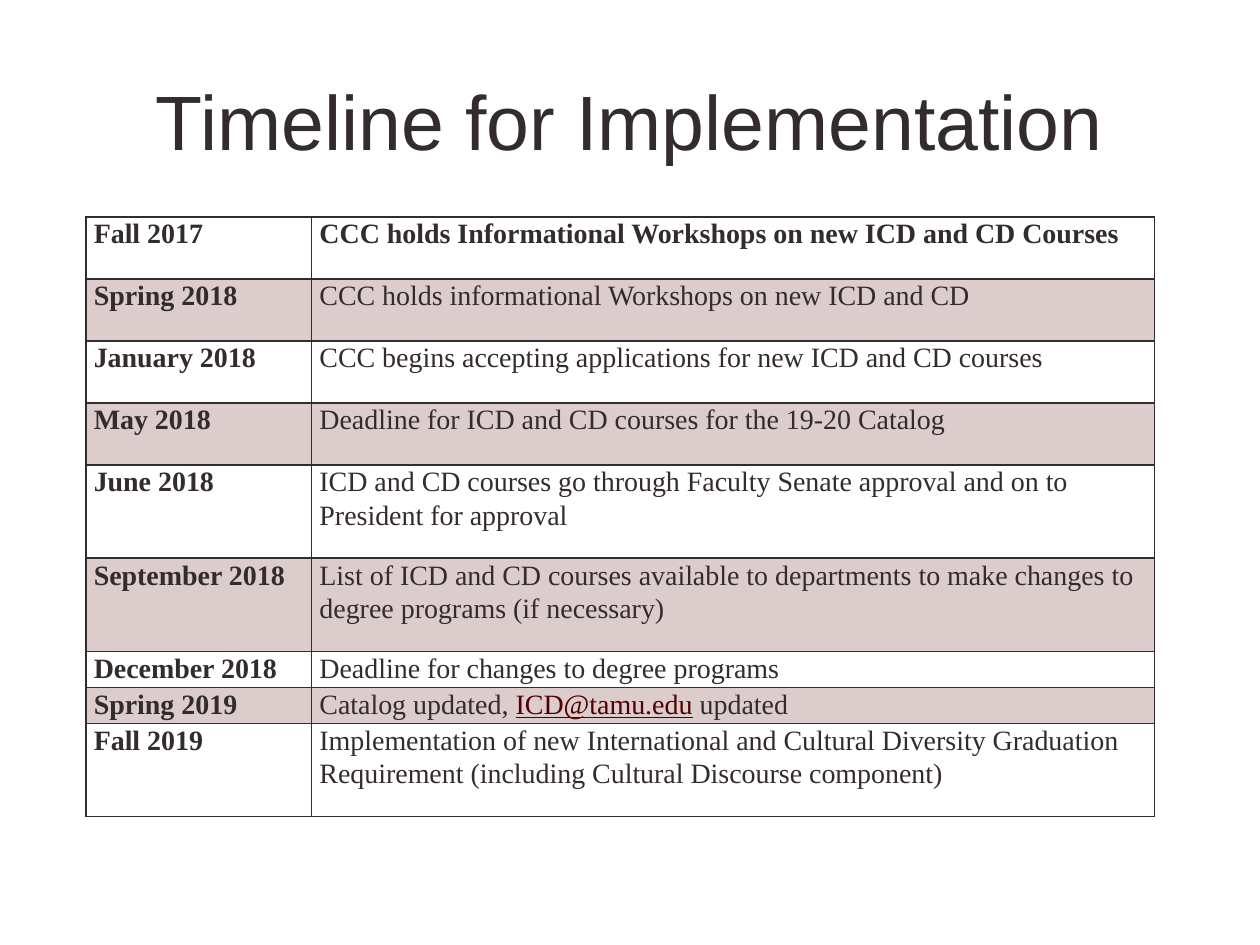
from lxml.etree import SubElement
from pptx import Presentation
from pptx.dml.color import RGBColor
from pptx.enum.text import MSO_ANCHOR, PP_ALIGN
from pptx.oxml.ns import qn
from pptx.util import Cm, Pt

INK = RGBColor(0x33, 0x2C, 0x2C)
MAROON = RGBColor(0x50, 0x00, 0x00)
SERIF = "Times New Roman"


def write(para, text, font=SERIF, size=16, color=INK, bold=False, line=False):
    run = para.add_run()
    run.text = text
    run.font.name = font
    run.font.size = Pt(size)
    run.font.color.rgb = color
    run.font.bold = bold
    run.font.underline = line


def border(cell):
    props = cell._tc.get_or_add_tcPr()
    for side in ("a:lnL", "a:lnR", "a:lnT", "a:lnB"):
        edge = SubElement(props, qn(side), w=str(Pt(1)))
        fill = SubElement(edge, qn("a:solidFill"))
        SubElement(fill, qn("a:srgbClr"), val=str(INK))


deck = Presentation()
deck.slide_width = Cm(25.4)
deck.slide_height = Cm(19.05)
slide = deck.slides.add_slide(deck.slide_layouts[6])

title = slide.shapes.add_textbox(Cm(1.27), Cm(0.91), Cm(22.86), Cm(3.02))
frame = title.text_frame
frame.word_wrap = True
frame.vertical_anchor = MSO_ANCHOR.MIDDLE
frame.paragraphs[0].alignment = PP_ALIGN.CENTER
write(frame.paragraphs[0], "Timeline for Implementation", font="Arial", size=44)

# Row height in cm, date, step
steps = [
    (1.25, "Fall 2017", "CCC holds Informational Workshops on new ICD and CD Courses"),
    (1.25, "Spring 2018", "CCC holds informational Workshops on new ICD and CD"),
    (1.25, "January 2018", "CCC begins accepting applications for new ICD and CD courses"),
    (1.25, "May 2018", "Deadline for ICD and CD courses for the 19-20 Catalog"),
    (1.88, "June 2018", "ICD and CD courses go through Faculty Senate approval "
     "and on to President for approval"),
    (1.88, "September 2018", "List of ICD and CD courses available to departments "
     "to make changes to degree programs (if necessary)"),
    (0.7, "December 2018", "Deadline for changes to degree programs"),
    (0.67, "Spring 2019", "Catalog updated, ICD@tamu.edu updated"),
    (1.88, "Fall 2019", "Implementation of new International and Cultural Diversity "
     "Graduation Requirement (including Cultural Discourse component)"),
]
mail = "ICD@tamu.edu"

table = slide.shapes.add_table(
    len(steps), 2, Cm(1.73), Cm(4.37), Cm(21.54), Cm(12.01)).table
table.first_row = False
table.horz_banding = False
table.columns[0].width = Cm(4.55)
table.columns[1].width = Cm(16.99)

for row, (high, date, step) in enumerate(steps):
    table.rows[row].height = Cm(high)
    for col, text in enumerate((date, step)):
        cell = table.cell(row, col)
        cell.margin_left = cell.margin_right = Cm(0.16)
        cell.margin_top = cell.margin_bottom = 0
        border(cell)
        if row % 2:
            cell.fill.solid()
            cell.fill.fore_color.rgb = MAROON
            tint = cell._tc.tcPr.find(qn("a:solidFill"))[0]
            SubElement(tint, qn("a:alpha"), val="20000")
        else:
            cell.fill.background()
        para = cell.text_frame.paragraphs[0]
        para.line_spacing = 1.07
        before, link, after = text.partition(mail)
        write(para, before, bold=col == 0 or row == 0)
        if link:
            write(para, link, color=MAROON, line=True)
            write(para, after)

deck.save("out.pptx")
